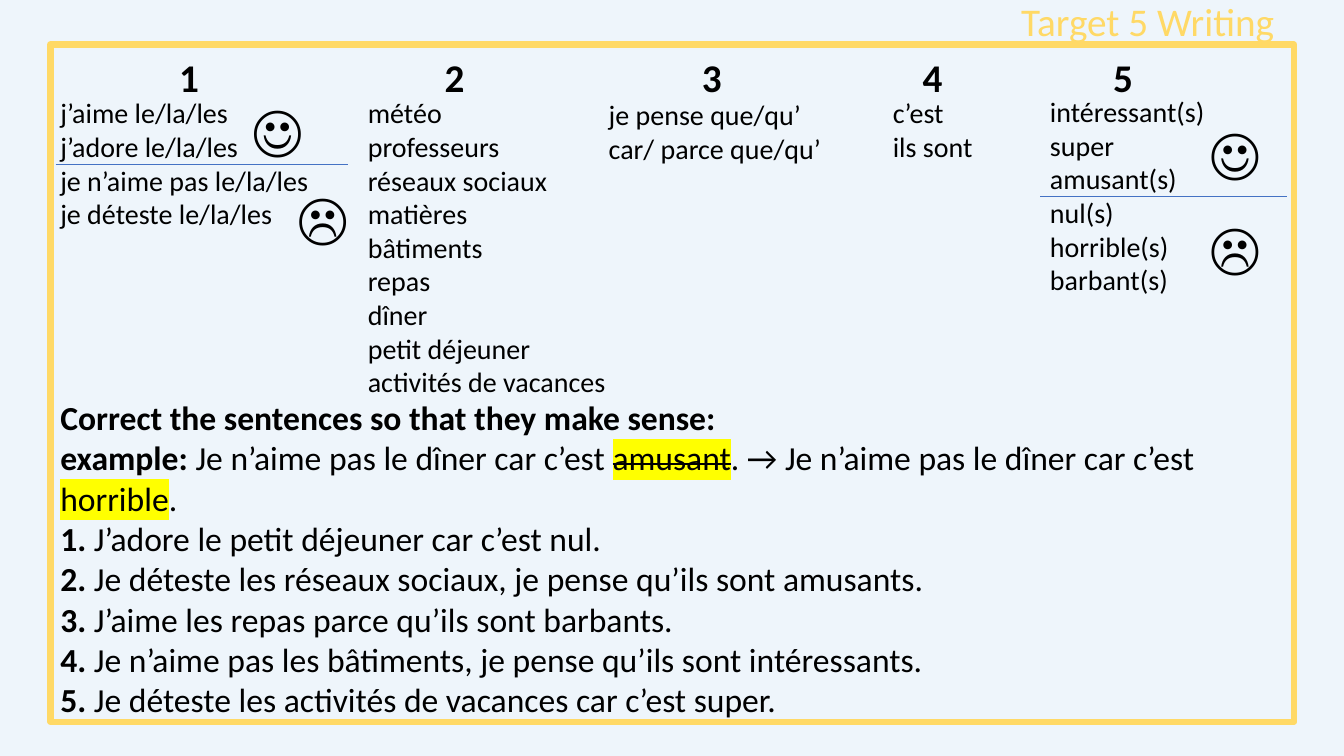
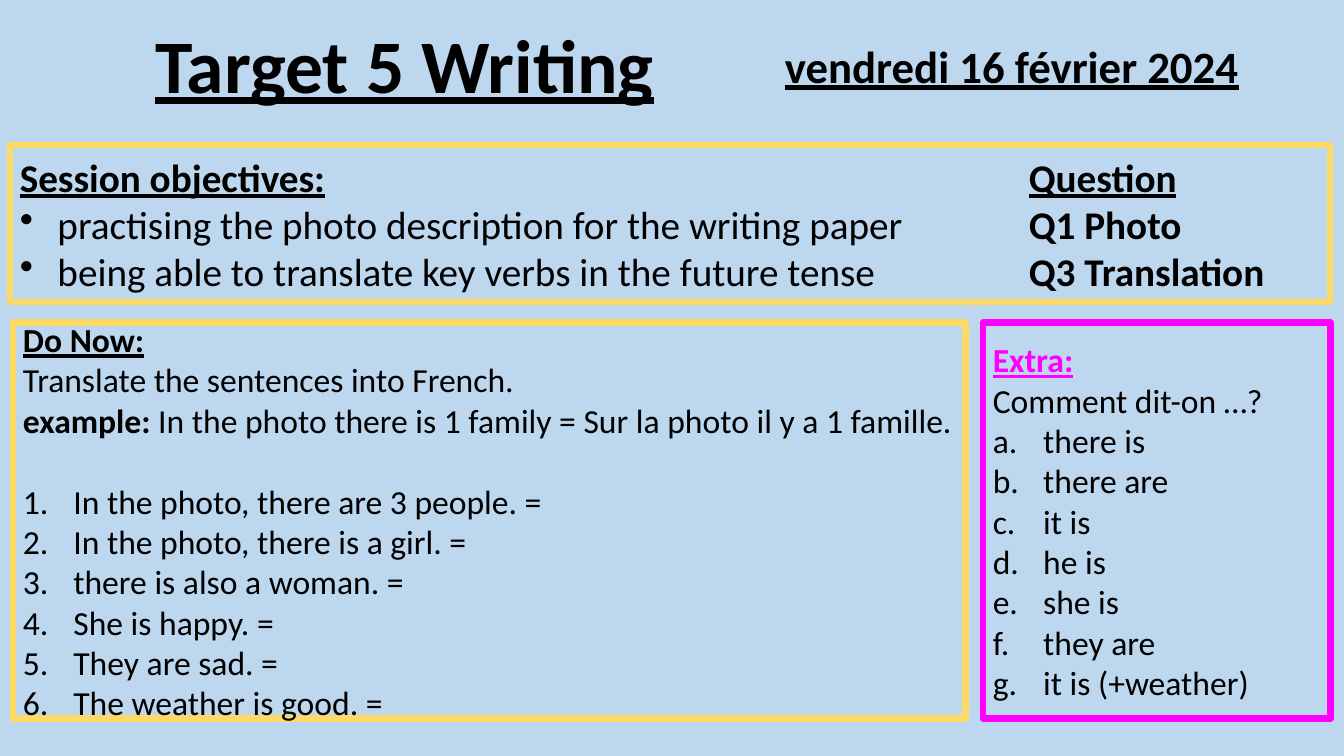
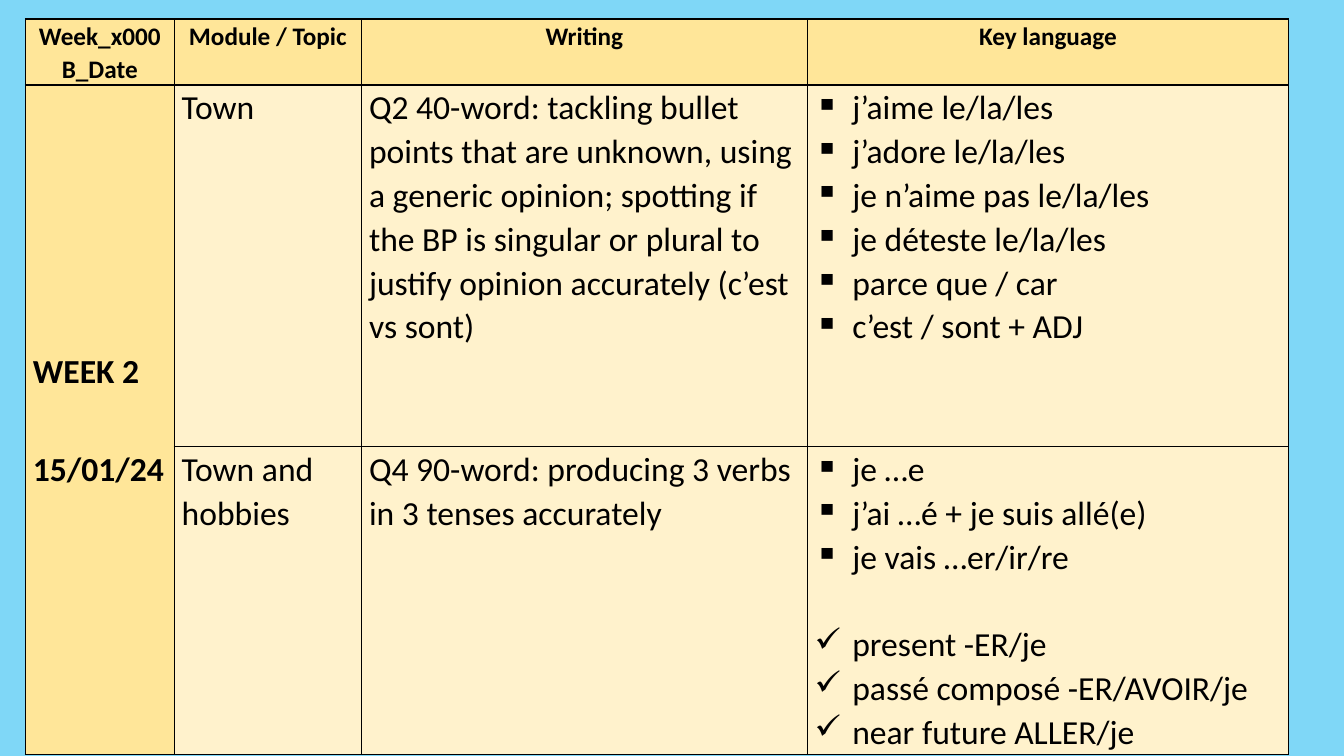
from dataclasses import dataclass

from pptx import Presentation
from pptx.dml.color import RGBColor
from pptx.enum import shapes as sh, text as tx
from pptx.oxml import ns, xmlchemy as xc
from pptx.oxml import parse_xml
from pptx.util import Cm, Pt


@dataclass(frozen=True)
class Theme:
    font: str = "Calibri"
    ink: str = "000000"
    gold: str = "FFD966"
    pink: str = "FF00FF"
    rule: str = "4472C4"
    mark: str = "FFFF00"
    head: str = "FFE699"
    cell: str = "FFF2CC"
    pale: str = "EEF5FB"
    blue: str = "BDD7EE"
    sky: str = "7FD7F7"
    word: int = 20
    body: int = 24
    lead: int = 28
    date: int = 32
    face: int = 40
    title: int = 54
    small: int = 18
    frame: float = 4.5


T = Theme()
PLAIN = "{2D5ABB26-0587-4C30-8999-92F81FD0307C}"  # table style without fill or grid
MID = tx.MSO_ANCHOR.MIDDLE


def rgb(code):
    return RGBColor.from_string(code)


def node(xml):
    """Build an element from a tag with attributes and content in the a: namespace."""
    tag = xml.split()[0].split(">")[0].strip("</")
    return parse_xml(xml.replace(f"<{tag}", f"<{tag} {ns.nsdecls('a')}", 1))


def bullet(para, mark, indent):
    """Hang a bullet character, or a numbering scheme such as arabicPeriod."""
    props = para._p.get_or_add_pPr()
    props.set("marL", str(Cm(indent)))
    props.set("indent", str(-Cm(indent)))
    kind = '<a:buChar char="%s"/>' if len(mark) == 1 else '<a:buAutoNum type="%s"/>'
    props.append(node(kind % mark))


def style(run, marks, size, color):
    """Marks: b bold, u underlined, s struck through, h highlighted."""
    font = run.font
    font.name, font.size = T.font, Pt(size)
    font.bold, font.underline = "b" in marks, "u" in marks
    font.color.rgb = rgb(color)
    props = run._r.get_or_add_rPr()
    if "s" in marks:
        props.set("strike", "sngStrike")
    if "h" in marks:
        glow = node(f'<a:highlight><a:srgbClr val="{T.mark}"/></a:highlight>')
        props.find(ns.qn("a:solidFill")).addnext(glow)


def write(frame, lines, size, marks="", color=T.ink, mark=None, indent=0.95,
          gap=0, pitch=None, align=tx.PP_ALIGN.LEFT):
    """Append lines; each is a string or a list of (text, marks). Gap precedes the first."""
    frame.word_wrap = True
    for i, line in enumerate(lines):
        para = frame.add_paragraph() if frame.text else frame.paragraphs[0]
        if mark:
            bullet(para, mark, indent)
        para.alignment = align
        if pitch:
            para.line_spacing = pitch
        if gap and i == 0:
            para.space_before = Pt(gap)
        for part, look in ([(line, marks)] if isinstance(line, str) else line):
            run = para.add_run()
            run.text = part
            style(run, look, size, color)


def page(deck, layout, color):
    slide = deck.slides.add_slide(deck.slide_layouts[layout])
    slide.background.fill.solid()
    slide.background.fill.fore_color.rgb = rgb(color)
    return slide


def title(slide, box, label, size, marks="", color=T.ink):
    hold = slide.shapes.title
    hold.left, hold.top, hold.width, hold.height = map(Cm, box)
    frame = hold.text_frame
    frame.auto_size = tx.MSO_AUTO_SIZE.NONE
    frame.vertical_anchor = MID
    frame.margin_top = frame.margin_bottom = 0
    write(frame, [label], size, marks, color)


def label(slide, box, lines, size, marks=""):
    frame = slide.shapes.add_textbox(*map(Cm, box)).text_frame
    write(frame, lines, size, marks)
    return frame


def panel(slide, box, color):
    """Outlined box; returns its text frame."""
    rect = slide.shapes.add_shape(sh.MSO_SHAPE.RECTANGLE, *map(Cm, box))
    rect.shadow.inherit = False
    rect.fill.background()
    rect.line.color.rgb = rgb(color)
    rect.line.width = Pt(T.frame)
    rect.text_frame.vertical_anchor = MID
    return rect.text_frame


def rule(slide, left, right, top):
    line = slide.shapes.add_connector(
        sh.MSO_CONNECTOR.STRAIGHT, Cm(left), Cm(top), Cm(right), Cm(top))
    line.line.color.rgb = rgb(T.rule)
    line.line.width = Pt(0.5)
    line._element.spPr.append(node("<a:effectLst/>"))


def grid(slide, left, top, cols, rows):
    """Plain table with the given column widths and row heights."""
    table = slide.shapes.add_table(
        len(rows), len(cols), Cm(left), Cm(top), Cm(sum(cols)), Cm(sum(rows))).table
    table.first_row = table.horz_banding = False
    table._tbl.tblPr.find(ns.qn("a:tableStyleId")).text = PLAIN
    for col, width in zip(table.columns, cols):
        col.width = Cm(width)
    for row, height in zip(table.rows, rows):
        row.height = Cm(height)
    return table


def rim(cell, color):
    """Black border, narrow insets and a fill."""
    props = cell._tc.get_or_add_tcPr()
    for side in "LRTB":
        props.append(node(
            f'<a:ln{side} w="12700"><a:solidFill><a:srgbClr val="{T.ink}"/>'
            f"</a:solidFill></a:ln{side}>"))
    cell.margin_left = cell.margin_right = Cm(0.19)
    cell.margin_top = cell.margin_bottom = 0
    cell.fill.solid()
    cell.fill.fore_color.rgb = rgb(color)


def bank(slide, left, top):
    """Numbered word columns with mood faces."""
    heads = grid(slide, left + 0.13, top, [6.73, 6.65, 6.32, 4.8, 4.8], [1.45])
    for i, cell in enumerate(heads.rows[0].cells, 1):
        cell.fill.background()
        write(cell.text_frame, [str(i)], T.lead, "b", align=tx.PP_ALIGN.CENTER)
    columns = [
        (0, 1.02, 7.5, ["j’aime le/la/les", "j’adore le/la/les",
                        "je n’aime pas le/la/les", "je déteste le/la/les"]),
        (7.75, 1.02, 7.34, ["météo", "professeurs", "réseaux sociaux", "matières",
                            "bâtiments", "repas", "dîner", "petit déjeuner",
                            "activités de vacances"]),
        (13.82, 1.07, 7, ["je pense que/qu’", "car/ parce que/qu’"]),
        (20.98, 1.02, 3.8, ["c’est", "ils sont"]),
        (24.94, 0.99, 6, ["intéressant(s)", "super", "amusant(s)",
                          "nul(s)", "horrible(s)", "barbant(s)"]),
    ]
    for x, y, width, words in columns:
        label(slide, (left + x, top + y, width, 0.85 * len(words) + 0.25), words, T.word)
    faces = [(4.83, 0.99, "☺"), (5.97, 3.2, "☹"), (28.96, 1.57, "☺"), (28.96, 3.96, "☹")]
    for x, y, face in faces:
        label(slide, (left + x, top + y, 2.1, 1.96), [face], T.face)
    rule(slide, left + 0.13, left + 7.49, top + 2.87)
    rule(slide, left + 24.94, left + 31.17, top + 3.68)


def fix(slide, box):
    """Sentences to correct."""
    frame = label(slide, box, ["Correct the sentences so that they make sense:"], T.body, "b")
    write(frame, [[("example: ", "b"), ("Je n’aime pas le dîner car c’est ", ""),
                   ("amusant", "sh"), (". → Je n’aime pas le dîner car c’est ", ""),
                   ("horrible", "h"), (".", "")]], T.body)
    tasks = [
        "J’adore le petit déjeuner car c’est nul.",
        "Je déteste les réseaux sociaux, je pense qu’ils sont amusants.",
        "J’aime les repas parce qu’ils sont barbants.",
        "Je n’aime pas les bâtiments, je pense qu’ils sont intéressants.",
        "Je déteste les activités de vacances car c’est super.",
    ]
    write(frame, [[(f"{i}. ", "b"), (task, "")] for i, task in enumerate(tasks, 1)], T.body)


def goals(slide, box):
    frame = panel(slide, box, T.gold)
    write(frame, ["Session objectives:"], T.lead, "bu")
    write(frame, ["practising the photo description for the writing paper",
                  "being able to translate key verbs in the future tense"],
          T.lead, mark="•")
    left, top, width, height = box
    side = label(slide, (left + 25.43, top, width - 25.43, height), ["Question"], T.lead, "bu")
    write(side, ["Q1 Photo", "Q3 Translation"], T.lead, "b")
    side.vertical_anchor = MID


def now(slide, box):
    frame = panel(slide, box, T.gold)
    write(frame, ["Do Now:"], T.body, "bu")
    write(frame, ["Translate the sentences into French.",
                  [("example: ", "b"),
                   ("In the photo there is 1 family = Sur la photo il y a 1 famille.", "")]],
          T.body)
    write(frame, ["In the photo, there are 3 people. =", "In the photo, there is a girl. =",
                  "there is also a woman. =", "She is happy. =", "They are sad. =",
                  "The weather is good. ="],
          T.body, mark="arabicPeriod", indent=1.27, gap=29)


def extra(slide, box):
    frame = panel(slide, box, T.pink)
    write(frame, ["Extra:"], T.body, "bu", T.pink)
    write(frame, ["Comment dit-on …?"], T.body)
    write(frame, ["there is", "there are", "it is", "he is", "she is", "they are",
                  "it is (+weather)"], T.body, mark="alphaLcPeriod", indent=1.27)


def plan(slide, left, top):
    """Weekly overview table."""
    table = grid(slide, left, top, [3.75, 4.72, 11.23, 12.14], [1.66, 9.12, 7.75])
    for r, row in enumerate(table.rows):
        for c, cell in enumerate(row.cells):
            rim(cell, T.cell if r and c else T.head)
    table.cell(1, 0).merge(table.cell(2, 0))

    def put(row, col, lines, size=T.body, **look):
        write(table.cell(row, col).text_frame, lines, size, pitch=1.07, **look)

    for c, head in enumerate(["Week\vDate", "Module / Topic", "Writing", "Key language"]):
        put(0, c, [head], T.small, marks="b", align=tx.PP_ALIGN.CENTER)
    put(1, 0, ["WEEK 2"], marks="b")
    put(1, 0, ["15/01/24"], marks="b", gap=38)
    table.cell(1, 0).vertical_anchor = MID
    put(1, 1, ["Town"])
    put(1, 2, ["Q2 40-word: tackling bullet points that are unknown, using a generic opinion; "
               "spotting if the BP is singular or plural to justify opinion accurately "
               "(c’est vs sont)"])
    put(1, 3, ["j’aime le/la/les", "j’adore le/la/les", "je n’aime pas le/la/les",
               "je déteste le/la/les", "parce que / car", "c’est / sont + ADJ"], mark="▪")
    put(2, 1, ["Town and hobbies"])
    put(2, 2, ["Q4 90-word: producing 3 verbs in 3 tenses accurately"])
    put(2, 3, ["je …e", "j’ai …é + je suis allé(e)", "je vais …er/ir/re"], mark="▪")
    put(2, 3, ["present -ER/je", "passé composé -ER/AVOIR/je", "near future ALLER/je"],
        mark="✓", gap=31)


def main():
    deck = Presentation()
    deck.slide_width, deck.slide_height = Cm(33.87), Cm(19.05)
    name = "Target 5 Writing"

    drill = page(deck, 5, T.pale)
    title(drill, (25.48, -0.08, 7.4, 1.2), name, T.lead, color=T.gold)
    panel(drill, (1.27, 1.12, 31.34, 17.07), T.gold)
    bank(drill, 1.27, 1.27)
    fix(drill, (1.27, 9.88, 31.17, 8.46))

    start = page(deck, 5, T.blue)
    title(start, (3.66, 0.3, 14, 2.57), name, T.title, "bu")
    label(start, (19.53, 0.84, 14.07, 1.63), ["vendredi 16 février 2024"], T.date, "bu")
    goals(start, (0.25, 3.66, 33.27, 3.96))
    now(start, (0.33, 8.13, 24, 9.98))
    extra(start, (24.77, 8.13, 8.76, 9.98))

    plan(page(deck, 6, T.sky), 0.64, 0.48)
    deck.save("out.pptx")


if __name__ == "__main__":
    main()
